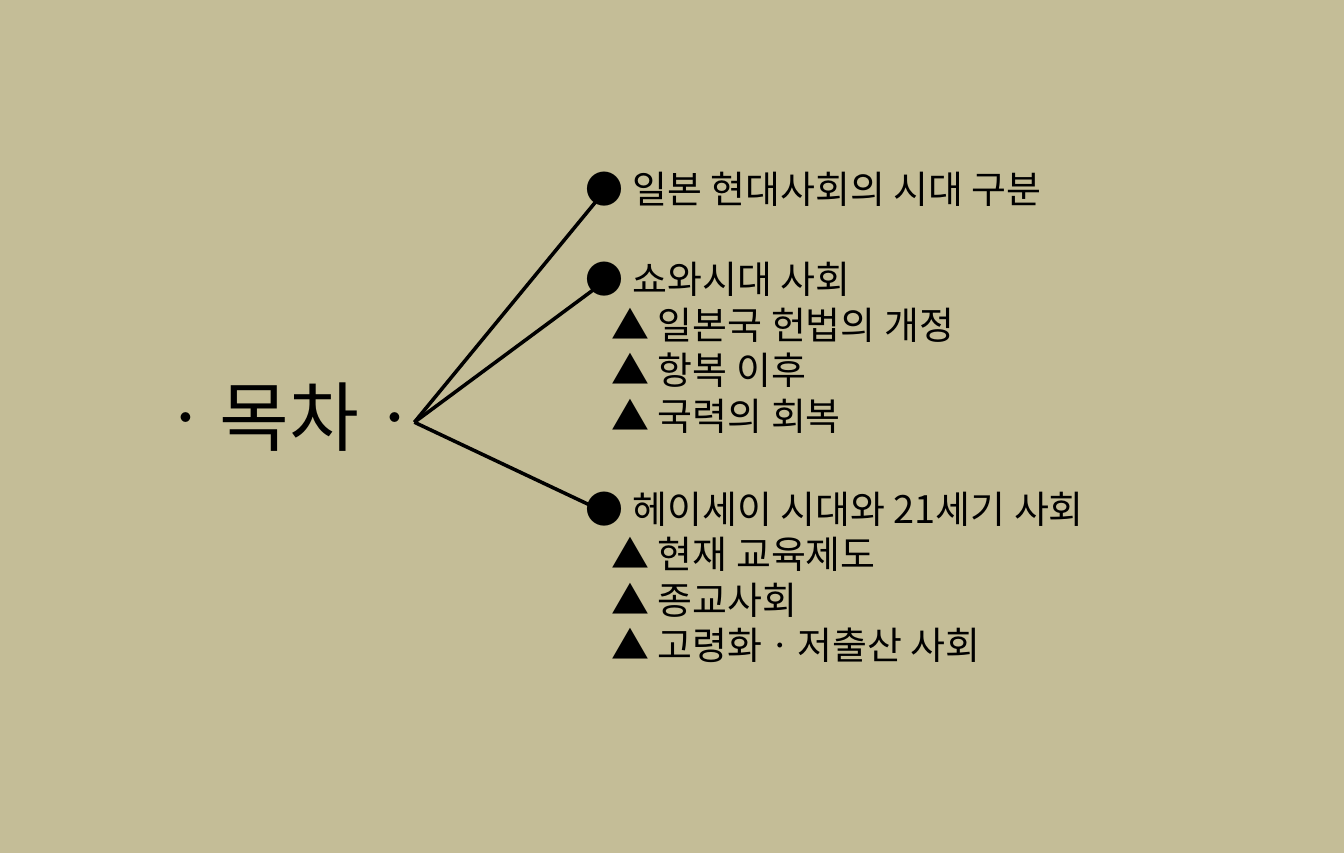
from dataclasses import dataclass

from lxml.etree import SubElement
from pptx import Presentation
from pptx.dml.color import RGBColor
from pptx.enum.shapes import MSO_CONNECTOR as Connector
from pptx.enum.text import MSO_ANCHOR as Anchor
from pptx.enum.text import MSO_AUTO_SIZE as AutoSize
from pptx.enum.text import PP_ALIGN as Align
from pptx.oxml.ns import qn
from pptx.util import Cm, Pt

# Content: heading, its sub-items, top of the block, line end (cm)
TITLE = "ㆍ목차ㆍ"
SECTIONS = [
    ("일본 현대사회의 시대 구분", [], 3.58, (13.41, 4.37)),
    ("쇼와시대 사회", ["일본국 헌법의 개정", "항복 이후", "국력의 회복"],
     5.59, (13.41, 6.35)),
    ("헤이세이 시대와 21세기 사회", ["현재 교육제도", "종교사회", "고령화ㆍ저출산 사회"],
     10.72, (13.21, 11.3)),
]


@dataclass(frozen=True)
class Theme:
    font: str = "Noto Sans CJK KR"
    background: RGBColor = RGBColor(0xC4, 0xBD, 0x97)
    ink: RGBColor = RGBColor(0, 0, 0)
    title_size: int = 48
    body_size: int = 24
    line_width: float = 2.25
    line_spacing: float = 1.2


THEME = Theme()
HUB = (9.25, 9.43)
SECTION_LEFT, SECTION_WIDTH = 12.83, 14.3
SUB_INDENT = 0.57
LINE_HEIGHT, PADDING = 1.02, 0.25


def place(shape, left, top, width, height):
    shape.left, shape.top = Cm(left), Cm(top)
    shape.width, shape.height = Cm(width), Cm(height)
    frame = shape.text_frame
    frame.word_wrap = True
    frame.auto_size = AutoSize.NONE
    frame.vertical_anchor = Anchor.TOP
    return frame


def write(paragraph, text, size):
    paragraph.alignment = Align.LEFT
    paragraph.line_spacing = Pt(size * THEME.line_spacing)
    run = paragraph.add_run()
    run.text = text
    run.font.size = Pt(size)
    run.font.name = THEME.font
    run.font.color.rgb = THEME.ink
    SubElement(run.font._element, qn("a:ea"), typeface=THEME.font)


def add_branch(slide, end):
    line = slide.shapes.add_connector(
        Connector.STRAIGHT, *(Cm(value) for value in HUB + end))
    line.line.color.rgb = THEME.ink
    line.line.width = Pt(THEME.line_width)
    SubElement(line._element.spPr, qn("a:effectLst"))


def add_section(slide, heading, items, top):
    height = (1 + len(items)) * LINE_HEIGHT + PADDING
    box = slide.shapes.add_textbox(0, 0, 0, 0)
    frame = place(box, SECTION_LEFT, top, SECTION_WIDTH, height)
    write(frame.paragraphs[0], f"● {heading}", THEME.body_size)
    for item in items:
        paragraph = frame.add_paragraph()
        properties = paragraph._p.get_or_add_pPr()
        properties.set("marL", str(Cm(SUB_INDENT)))
        properties.set("indent", "0")
        write(paragraph, f"▲ {item}", THEME.body_size)


def main():
    presentation = Presentation()
    presentation.slide_width, presentation.slide_height = Cm(30), Cm(19.05)
    slide = presentation.slides.add_slide(presentation.slide_layouts[5])
    slide.background.fill.solid()
    slide.background.fill.fore_color.rgb = THEME.background

    # Title at the root of the branches
    frame = place(slide.shapes.title, 3.1, 8.13, 7.34, 2.31)
    write(frame.paragraphs[0], TITLE, THEME.title_size)

    # Branches, then the sections they lead to
    for *_, end in SECTIONS:
        add_branch(slide, end)
    for heading, items, top, _ in SECTIONS:
        add_section(slide, heading, items, top)

    presentation.save("out.pptx")


if __name__ == "__main__":
    main()
